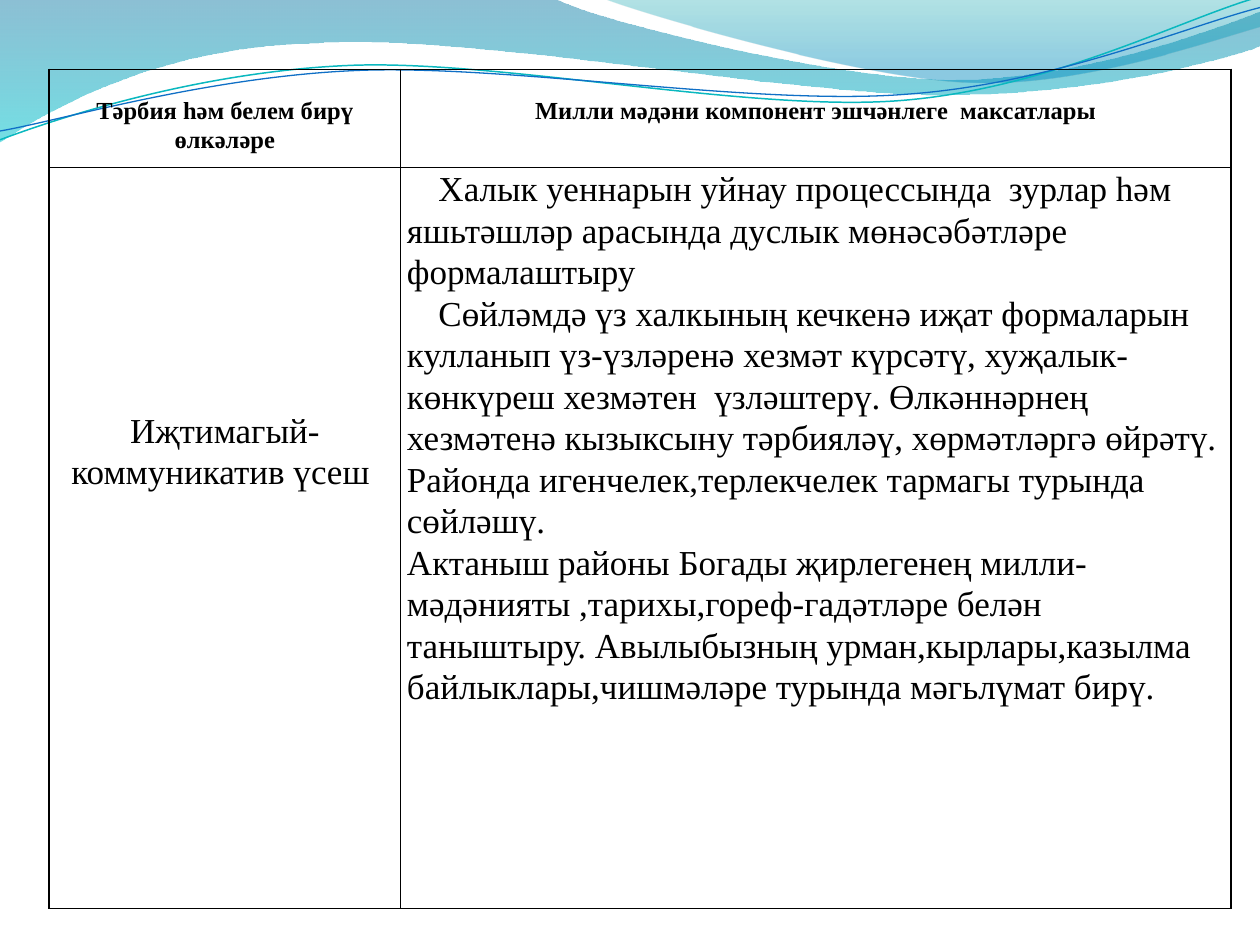
"""Builds a slide with a wave header and a two-column table of educational goals."""
from lxml.etree import Element, SubElement
from pptx import Presentation
from pptx.dml.color import RGBColor
from pptx.enum.text import PP_ALIGN
from pptx.oxml.ns import qn
from pptx.util import Inches, Pt

COLORS = {
    "black": "000000",
    "blue": "0074A1",
    "turquoise": "00C6CF",
    "teal": "00A1A9",
    "azure": "008BBF",
    "teal line": "0AB8BF",
    "blue line": "0F6FC6",
}

LEFT_WAVE = [
    (0, 0), (4.4, -0.01),
    (4.76, 0.17, 6.64, 0.63, 7.58, 0.63),
    (8.53, 0.63, 9.58, 0.26, 10, 0.09),
    (10.01, 0.36),
    (9.83, 0.44, 8.7, 0.76, 7.46, 0.75),
    (6.22, 0.75, 3.82, 0.28, 2.57, 0.34),
    (1.29, 0.36, 0.46, 0.83, -0.01, 1.13),
]
RIGHT_WAVE = [
    (4.79, -0.01),
    (5.09, 0.11, 6.82, 0.62, 7.69, 0.65),
    (8.56, 0.69, 9.61, 0.32, 10, 0.21),
    (10, 0),
]
TEAL_STRAND = [
    (0, 1.11),
    (0.48, 0.93, 1.58, 0.57, 2.77, 0.52),
    (3.95, 0.47, 5.93, 0.89, 7.13, 0.8),
    (8.33, 0.71, 9.38, 0.15, 9.98, -0.02),
]
BLUE_STRAND = [
    (0, 1.04),
    (0.47, 0.96, 1.64, 0.61, 2.83, 0.56),
    (4.03, 0.51, 5.97, 0.84, 7.17, 0.75),
    (8.36, 0.67, 9.41, 0.21, 10, 0.06),
]

GOALS = [
    "Халык уеннарын уйнау процессында  зурлар һәм яшьтәшләр арасында дуслык "
    "мөнәсәбәтләре формалаштыру",
    "Сөйләмдә үз халкының кечкенә иҗат формаларын кулланып үз-үзләренә хезмәт "
    "күрсәтү, хуҗалык-көнкүреш хезмәтен  үзләштерү. Өлкәннәрнең хезмәтенә "
    "кызыксыну тәрбияләү, хөрмәтләргә өйрәтү. Районда игенчелек,терлекчелек "
    "тармагы турында сөйләшү.",
    "Актаныш районы Богады җирлегенең милли-мәдәнияты ,тарихы,гореф-гадәтләре "
    "белән таныштыру. Авылыбызның урман,кырлары,казылма байлыклары,чишмәләре "
    "турында мәгьлүмат бирү.",
]


class SlideBuilder:
    """Holds the style and the current slide."""

    font_name = "Times New Roman"
    line_spacing = 1.07

    def __init__(self, slide):
        self.slide = slide

    def color(self, name):
        """Return the named colour."""
        return RGBColor.from_string(COLORS[name])

    def outline(self, segments, close):
        """Add a freeform of straight (2 numbers) and cubic (6 numbers) segments."""
        points = [
            (Inches(segment[i]), Inches(segment[i + 1]))
            for segment in segments for i in range(0, len(segment), 2)
        ]
        builder = self.slide.shapes.build_freeform(*points[0])
        builder.add_line_segments(points[1:], close=close)
        shape = builder.convert_to_shape()
        shape.shadow.inherit = False
        lines = iter(list(shape._element.iter(qn("a:lnTo"))))
        for segment in segments[1:]:
            parts = [next(lines) for _ in range(len(segment) // 2)]
            if len(parts) == 3:
                curve = Element(qn("a:cubicBezTo"))
                parts[0].addprevious(curve)
                for part in parts:
                    curve.append(part[0])
                    part.getparent().remove(part)
        return shape

    def wave(self, segments, stops):
        """Add a closed wave with a translucent vertical gradient."""
        shape = self.outline(segments, True)
        shape.line.fill.background()
        shape.fill.gradient()
        shape.fill.gradient_angle = 270
        for stop, (position, name, _) in zip(shape.fill.gradient_stops, stops):
            stop.position = position
            stop.color.rgb = self.color(name)
        color_elements = shape._element.spPr.iter(qn("a:srgbClr"))
        for element, (_, _, opacity) in zip(color_elements, stops):
            SubElement(element, qn("a:alpha"), val=str(opacity * 1000))

    def strand(self, segments, name, width):
        """Add an open curved line."""
        shape = self.outline(segments, False)
        shape.fill.background()
        shape.line.color.rgb = self.color(name)
        shape.line.width = Pt(width)

    def table(self, left, top, widths, heights):
        """Add a plain table and return it."""
        frame = self.slide.shapes.add_table(
            len(heights), len(widths), Inches(left), Inches(top),
            Inches(sum(widths)), Inches(sum(heights)),
        )
        table = frame.table
        table.first_row = table.horz_banding = False
        for column, width in zip(table.columns, widths):
            column.width = Inches(width)
        for row, height in zip(table.rows, heights):
            row.height = Inches(height)
        return table

    def borders(self, cell):
        """Draw a thin black line on every side of the cell."""
        properties = cell._tc.get_or_add_tcPr()
        for side in "LRTB":
            line = SubElement(properties, qn(f"a:ln{side}"), w=str(Pt(1)))
            fill = SubElement(line, qn("a:solidFill"))
            SubElement(fill, qn("a:srgbClr"), val=COLORS["black"])

    def cell(self, cell, texts, size, bold=False, align=PP_ALIGN.CENTER, top=0, indents=()):
        """Fill a table cell with paragraphs."""
        self.borders(cell)
        cell.fill.background()
        cell.margin_left = cell.margin_right = Inches(0.05)
        cell.margin_top, cell.margin_bottom = Inches(top), 0
        text_frame = cell.text_frame
        for index, text in enumerate(texts):
            paragraph = text_frame.add_paragraph() if index else text_frame.paragraphs[0]
            paragraph.alignment = align
            paragraph.line_spacing = self.line_spacing
            if index < len(indents):
                properties = paragraph._p.get_or_add_pPr()
                properties.set("marL", "0")
                properties.set("indent", str(Inches(indents[index])))
            run = paragraph.add_run()
            run.text = text
            run.font.name = self.font_name
            run.font.size = Pt(size)
            run.font.bold = bold
            run.font.color.rgb = self.color("black")


def main():
    """Build and save the presentation."""
    presentation = Presentation()
    presentation.slide_width, presentation.slide_height = Inches(10), Inches(7.5)
    builder = SlideBuilder(presentation.slides.add_slide(presentation.slide_layouts[6]))

    builder.wave(LEFT_WAVE, [(0, "blue", 45), (1, "turquoise", 55)])
    builder.wave(RIGHT_WAVE, [(0, "teal", 30), (0.8, "azure", 45)])
    builder.strand(TEAL_STRAND, "teal line", 0.85)
    builder.strand(BLUE_STRAND, "blue line", 0.75)

    table = builder.table(0.39, 0.55, [2.79, 6.59], [0.78, 5.88])
    headings = ["Тәрбия һәм белем бирү өлкәләре", "Милли мәдәни компонент эшчәнлеге  максатлары"]
    for column, heading in enumerate(headings):
        builder.cell(table.cell(0, column), [heading], 14, bold=True, top=0.21)
    builder.cell(table.cell(1, 0), ["Иҗтимагый-коммуникатив үсеш "], 20, top=1.92)
    builder.cell(table.cell(1, 1), GOALS, 20, align=PP_ALIGN.LEFT, indents=(0.25, 0.25))

    presentation.save("out.pptx")


if __name__ == "__main__":
    main()
